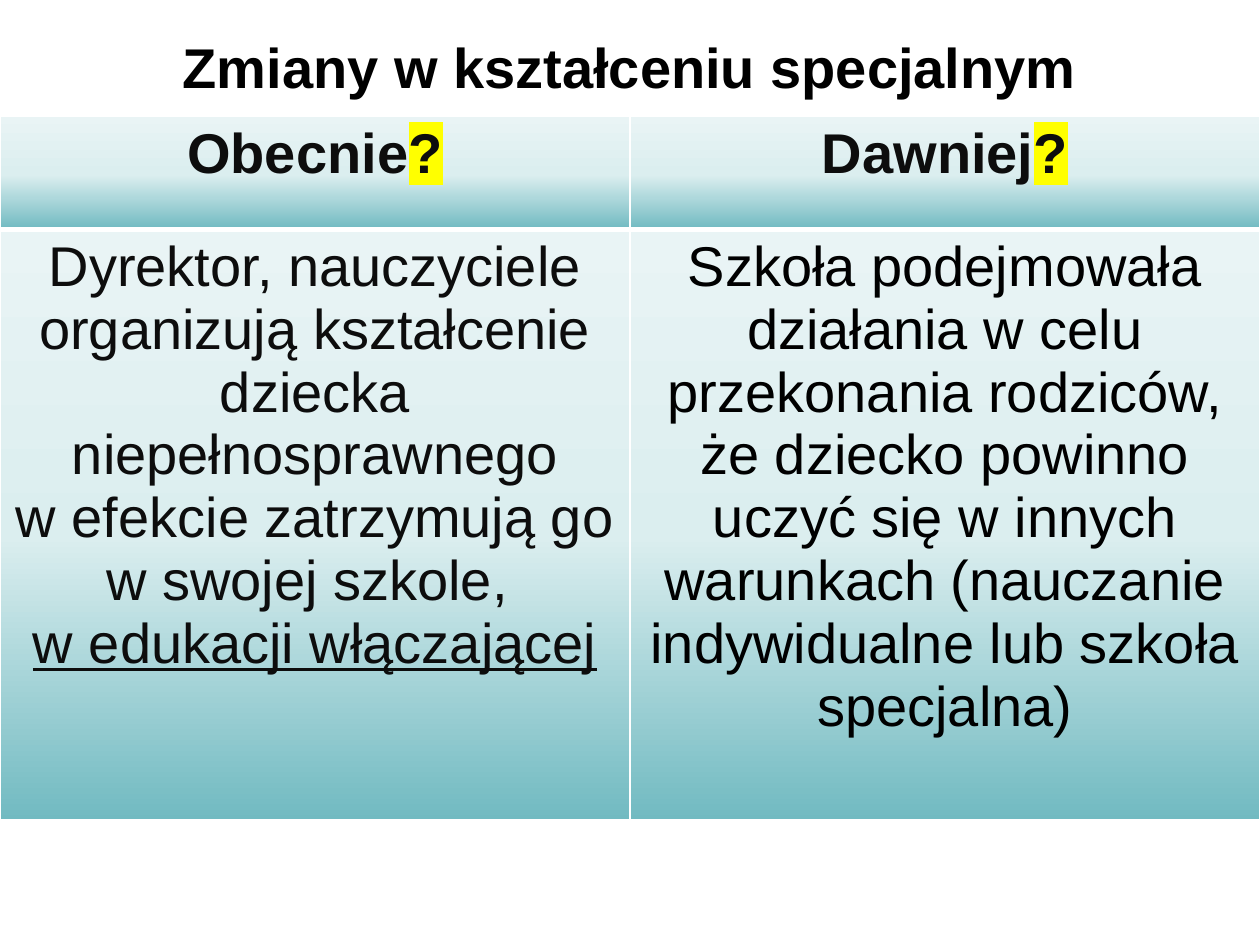
from lxml.etree import SubElement
from pptx import Presentation
from pptx.dml.color import RGBColor
from pptx.enum.text import MSO_ANCHOR, MSO_AUTO_SIZE, PP_ALIGN
from pptx.oxml.ns import qn
from pptx.util import Pt

BLACK = RGBColor(0x00, 0x00, 0x00)
DARK = RGBColor(0x0D, 0x0D, 0x0D)
WHITE = RGBColor(0xFF, 0xFF, 0xFF)
YELLOW = RGBColor(0xFF, 0xFF, 0x00)
GRADIENT = [
    (0, RGBColor(0x71, 0xBA, 0xC1)),
    (48, RGBColor(0xDB, 0xEE, 0xEF)),
    (100, RGBColor(0xE9, 0xF4, 0xF5)),
]

SLIDE_WIDTH, SLIDE_HEIGHT = 720, 540
TABLE_TOP = 66.24
ROW_HEIGHTS = [64.8, 337.68]
HEADERS = ["Obecnie", "Dawniej"]
NOW_TEXTS = [
    "Dyrektor, nauczyciele organizują kształcenie dziecka niepełnosprawnego",
    "w efekcie zatrzymują go w swojej szkole, ",
    "w edukacji włączającej",
]
BEFORE_TEXT = (
    "Szkoła podejmowała działania w celu przekonania rodziców, że dziecko "
    "powinno uczyć się w innych warunkach (nauczanie indywidualne lub szkoła "
    "specjalna)"
)


def add_run(paragraph, text, color=DARK, bold=False, underline=False):
    paragraph.alignment = PP_ALIGN.CENTER
    run = paragraph.add_run()
    run.text = text
    font = run.font
    font.name = "Arial"
    font.size = Pt(32)
    font.bold = bold
    font.underline = underline
    font.color.rgb = color
    return run


def highlight(run, color):
    properties = run.font._element
    mark = SubElement(properties, qn("a:highlight"))
    SubElement(mark, qn("a:srgbClr"), val=str(color))
    properties.find(qn("a:solidFill")).addnext(mark)


def add_border(cell, side, width):
    line = SubElement(cell._tc.get_or_add_tcPr(), qn(f"a:ln{side}"), w=str(Pt(width)))
    fill = SubElement(line, qn("a:solidFill"))
    SubElement(fill, qn("a:srgbClr"), val=str(WHITE))


def add_gradient(cell):
    """Fill the cell from dark at the bottom to light at the top."""
    fill = SubElement(cell._tc.get_or_add_tcPr(), qn("a:gradFill"), rotWithShape="1")
    stops = SubElement(fill, qn("a:gsLst"))
    for percent, color in GRADIENT:
        stop = SubElement(stops, qn("a:gs"), pos=str(percent * 1000))
        SubElement(stop, qn("a:srgbClr"), val=str(color))
    SubElement(fill, qn("a:lin"), ang=str(270 * 60000), scaled="0")


def format_cell(cell, top_border, bottom_border):
    cell.margin_left = cell.margin_right = Pt(7.2)
    cell.margin_top = cell.margin_bottom = Pt(3.6)
    widths = {"L": 1, "R": 1, "T": top_border, "B": bottom_border}
    for side, width in widths.items():
        add_border(cell, side, width)
    add_gradient(cell)


def add_title(slide, text):
    title = slide.shapes.title
    title.left, title.top = Pt(39.6), Pt(15.12)
    title.width, title.height = Pt(640.8), Pt(46.08)
    frame = title.text_frame
    frame.word_wrap = True
    frame.auto_size = MSO_AUTO_SIZE.NONE
    frame.vertical_anchor = MSO_ANCHOR.TOP
    add_run(frame.paragraphs[0], text, BLACK, bold=True)


def add_comparison_table(slide):
    table = slide.shapes.add_table(
        2, 2, Pt(0), Pt(TABLE_TOP), Pt(SLIDE_WIDTH), Pt(sum(ROW_HEIGHTS))
    ).table
    table.first_row = table.horz_banding = False
    for row, height in zip(table.rows, ROW_HEIGHTS):
        row.height = Pt(height)

    for column, header in enumerate(HEADERS):
        format_cell(table.cell(0, column), top_border=1, bottom_border=3)
        format_cell(table.cell(1, column), top_border=3, bottom_border=1)
        paragraph = table.cell(0, column).text_frame.paragraphs[0]
        add_run(paragraph, header, bold=True)
        highlight(add_run(paragraph, "?", bold=True), YELLOW)

    now_frame = table.cell(1, 0).text_frame
    for index, text in enumerate(NOW_TEXTS):
        paragraph = now_frame.add_paragraph() if index else now_frame.paragraphs[0]
        add_run(paragraph, text, underline=text == NOW_TEXTS[-1])
    add_run(table.cell(1, 1).text_frame.paragraphs[0], BEFORE_TEXT, BLACK)


def main():
    presentation = Presentation()
    presentation.slide_width = Pt(SLIDE_WIDTH)
    presentation.slide_height = Pt(SLIDE_HEIGHT)
    slide = presentation.slides.add_slide(presentation.slide_layouts[5])
    add_comparison_table(slide)
    add_title(slide, "Zmiany w kształceniu specjalnym")
    presentation.save("out.pptx")


if __name__ == "__main__":
    main()
